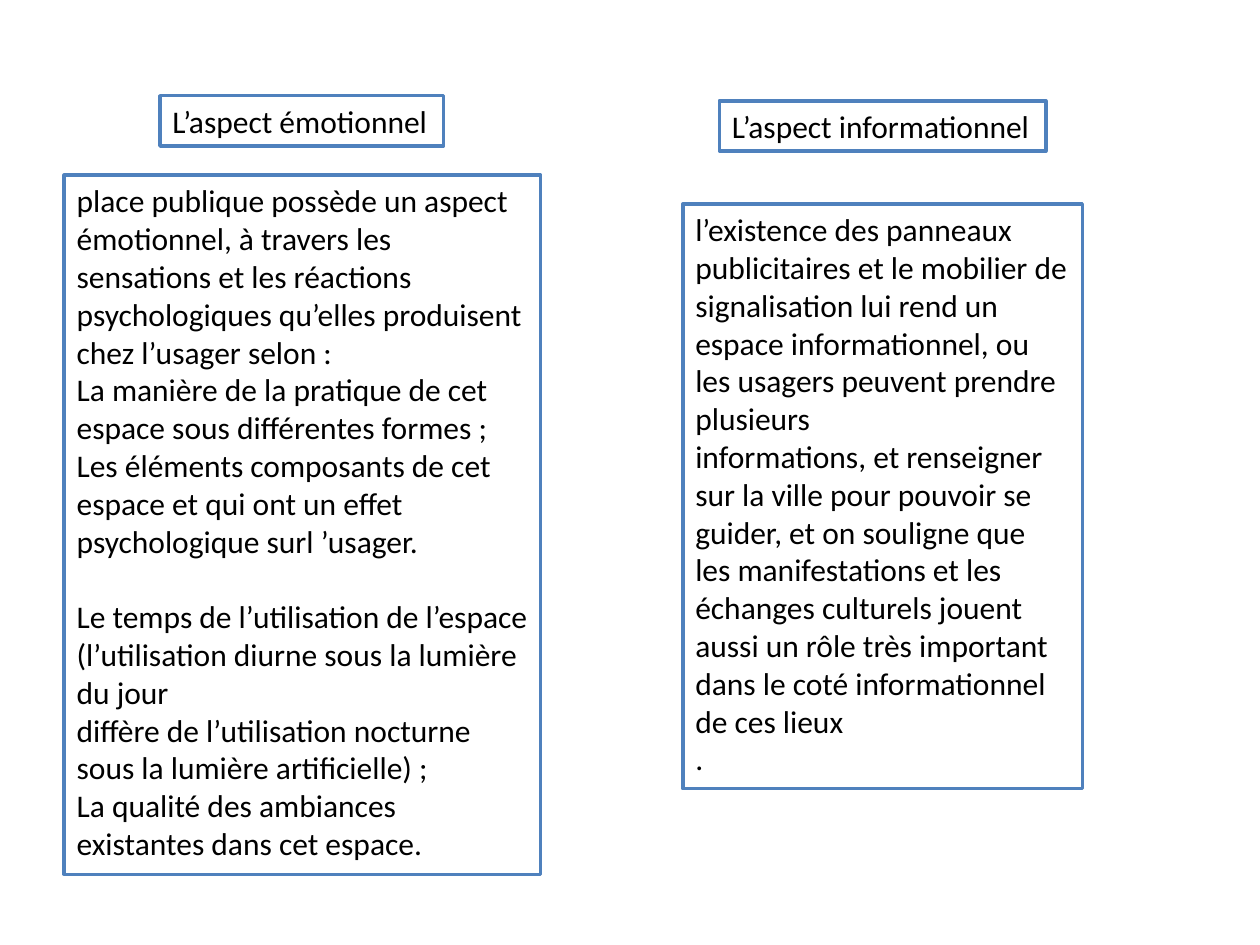
from pptx import Presentation
from pptx.dml.color import RGBColor
from pptx.enum import text
from pptx.util import Inches, Pt

WHITE = RGBColor(0xFF, 0xFF, 0xFF)
BLACK = RGBColor(0, 0, 0)
BLUE = RGBColor(0x4F, 0x81, 0xBD)
LINE_HEIGHT = 21.6

EMOTION_GROUPS = [
    [
        "place publique possède un aspect émotionnel, à travers les",
        "sensations et les réactions psychologiques qu’elles produisent chez l’usager selon :",
        "La manière de la pratique de cet espace sous différentes formes ;",
        "Les éléments composants de cet espace et qui ont un effet psychologique surl ’usager.",
    ],
    [
        "Le temps de l’utilisation de l’espace (l’utilisation diurne sous la lumière du jour",
        "diffère de l’utilisation nocturne sous la lumière artificielle) ;",
        "La qualité des ambiances existantes dans cet espace.",
    ],
]
INFORMATION_GROUPS = [
    [
        "l’existence des panneaux publicitaires et le mobilier de",
        "signalisation lui rend un espace informationnel, ou les usagers peuvent prendre plusieurs",
        "informations, et renseigner sur la ville pour pouvoir se guider, et on souligne que",
        "les manifestations et les échanges culturels jouent aussi un rôle très important "
        "dans le coté informationnel de ces lieux",
        ".",
    ],
]
PANELS = [
    (EMOTION_GROUPS, (0.51, 1.39, 3.78, 5.55), True),
    ([["L’aspect émotionnel"]], (1.27, 0.76, 2.25, 0.4), False),
    ([["L’aspect informationnel"]], (5.71, 0.8, 2.59, 0.4), False),
    (INFORMATION_GROUPS, (5.42, 1.62, 3.17, 4.64), True),
]


def write_para(para, words, *, size=18, color=BLACK, before=0):
    para.space_before = Pt(before)
    span = para.add_run()
    span.text = words
    span.font.name = "Calibri"
    span.font.size = Pt(size)
    span.font.color.rgb = color


def add_panel(page, groups, place, wrap):
    box = page.shapes.add_textbox(*map(Inches, place))
    box.fill.solid()
    box.fill.fore_color.rgb = WHITE
    box.line.color.rgb = BLUE
    box.line.width = Pt(2)
    frame = box.text_frame
    frame.word_wrap = wrap
    frame.auto_size = text.MSO_AUTO_SIZE.SHAPE_TO_FIT_TEXT
    for group_index, group in enumerate(groups):
        for index, words in enumerate(group):
            first = group_index == index == 0
            para = frame.paragraphs[0] if first else frame.add_paragraph()
            starts_group = group_index > 0 and index == 0
            write_para(para, words, before=LINE_HEIGHT if starts_group else 0)


def main():
    deck = Presentation()
    deck.slide_width = Inches(10)
    deck.slide_height = Inches(7.5)
    page = deck.slides.add_slide(deck.slide_layouts[6])
    for groups, place, wrap in PANELS:
        add_panel(page, groups, place, wrap)
    deck.save("out.pptx")


if __name__ == "__main__":
    main()
